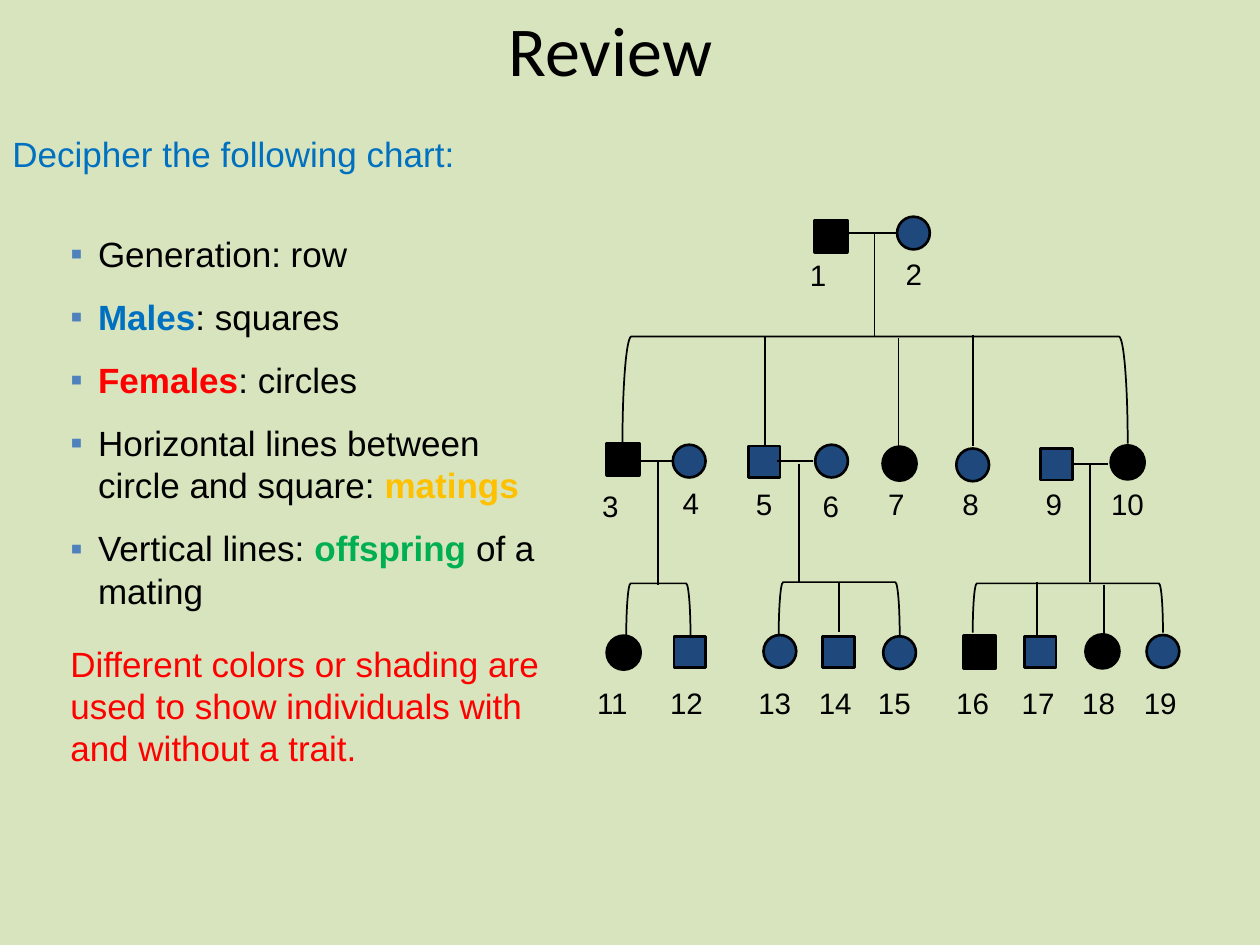
import pptx
import pptx.util
import pptx.dml.color
import pptx.enum.shapes
import pptx.enum.text
import pptx.oxml.ns
import lxml.etree

Inches = pptx.util.Inches
Pt = pptx.util.Pt
RGBColor = pptx.dml.color.RGBColor
SHAPE = pptx.enum.shapes.MSO_SHAPE
FIT = pptx.enum.text.MSO_AUTO_SIZE

BLACK = RGBColor(0x00, 0x00, 0x00)
NAVY = RGBColor(0x1F, 0x49, 0x7D)
BLUE = RGBColor(0x00, 0x70, 0xC0)
RED = RGBColor(0xFF, 0x00, 0x00)
GOLD = RGBColor(0xFF, 0xC0, 0x00)
GREEN = RGBColor(0x00, 0xB0, 0x50)
STEEL = RGBColor(0x4F, 0x81, 0xBD)
SAGE = RGBColor(0xD7, 0xE4, 0xBD)

SIDE = 0.25
AFFECTED = {1, 3, 7, 10, 11, 16, 18}
MALES = {1, 3, 5, 9, 12, 14, 16, 17}

# number: symbol left, symbol top, label left, label top
PEOPLE = {
    1: (1.87, 0.05, 1.73, 0.29), 2: (2.52, 0.02, 2.49, 0.28),
    3: (0.22, 1.82, 0.08, 2.12), 4: (0.74, 1.83, 0.72, 2.1),
    5: (1.34, 1.84, 1.3, 2.11), 6: (1.87, 1.83, 1.83, 2.12),
    7: (2.41, 1.85, 2.35, 2.11), 8: (2.99, 1.86, 2.94, 2.11),
    9: (3.66, 1.86, 3.6, 2.11), 10: (4.22, 1.84, 4.12, 2.11),
    11: (0.22, 3.35, 0.04, 3.69), 12: (0.75, 3.35, 0.62, 3.69),
    13: (1.46, 3.34, 1.32, 3.69), 14: (1.93, 3.35, 1.8, 3.69),
    15: (2.41, 3.35, 2.27, 3.69), 16: (3.05, 3.35, 2.89, 3.69),
    17: (3.53, 3.35, 3.41, 3.69), 18: (4.02, 3.34, 3.89, 3.69),
    19: (4.5, 3.34, 4.38, 3.69),
}
MATINGS = [(2.14, 0.15, 2.52), (0.46, 1.96, 0.74),
           (1.57, 1.96, 1.85), (3.91, 1.98, 4.19)]
DROPS = [(2.34, 0.15, 0.97), (0.62, 1.96, 2.94), (1.74, 1.98, 2.92),
         (4.05, 1.99, 2.92), (1.47, 0.97, 1.85), (2.53, 0.98, 1.86),
         (3.12, 0.96, 1.84), (2.06, 2.93, 3.32), (3.63, 2.92, 3.34),
         (4.16, 2.94, 3.37)]
BROODS = [(0.34, 0.97, 4.01, 0.85), (0.37, 2.93, 0.51, 0.42),
          (1.58, 2.92, 0.96, 0.42), (3.12, 2.93, 1.51, 0.39)]

POINTS = [
    ("Generation: row", "", BLACK, ""),
    ("", "Males", BLUE, ": squares"),
    ("", "Females", RED, ": circles"),
    ("Horizontal lines between circle and square: ", "matings", GOLD, ""),
    ("Vertical lines: ", "offspring", GREEN, " of a mating"),
]


def set_font(part, size, color=None, name="Arial"):
    part.font.size = Pt(size)
    part.font.name = name
    if color is not None:
        part.font.color.rgb = color


def add_text(slide, box, wrap=True):
    frame = slide.shapes.add_textbox(*map(Inches, box)).text_frame
    frame.word_wrap = wrap
    frame.auto_size = FIT.SHAPE_TO_FIT_TEXT
    return frame


def add_bullet(para):
    props = para._p.get_or_add_pPr()
    props.set("marL", str(Inches(0.22)))
    props.set("indent", str(-Inches(0.22)))
    tag = pptx.oxml.ns.qn
    color = lxml.etree.SubElement(props, tag("a:buClr"))
    lxml.etree.SubElement(color, tag("a:srgbClr"), val=str(STEEL))
    lxml.etree.SubElement(props, tag("a:buFont"), typeface="Arial")
    lxml.etree.SubElement(props, tag("a:buChar"), char="▪")


def add_title(slide, box):
    title = slide.shapes.title
    title.left, title.top, title.width, title.height = map(Inches, box)
    title.text_frame.text = "Review"
    para = title.text_frame.paragraphs[0]
    para.alignment = pptx.enum.text.PP_ALIGN.CENTER
    set_font(para, 40, BLACK, "Calibri")


def add_lead(slide, box):
    para = add_text(slide, box).paragraphs[0]
    para.text = "Decipher the following chart:"
    para.space_before = Pt(10)
    set_font(para, 20, BLUE)


def add_points(slide, box):
    frame = add_text(slide, box)
    para = frame.paragraphs[0]
    for start, key, color, end in POINTS:
        add_bullet(para)
        para.space_before = Pt(12)
        set_font(para, 20)
        for text, shade in ((start, BLACK), (key, color), (end, BLACK)):
            if text:
                run = para.add_run()
                run.text = text
                run.font.bold = text == key
                run.font.color.rgb = shade
        para = frame.add_paragraph()
    frame.paragraphs[0].line_spacing = 1.03
    para.text = ("Different colors or shading are used to show "
                 "individuals with and without a trait.")
    para.space_before = Pt(18)
    set_font(para, 20, RED)


def add_line(slide, *ends):
    kind = pptx.enum.shapes.MSO_CONNECTOR.STRAIGHT
    line = slide.shapes.add_connector(kind, *map(Inches, ends))
    line.line.color.rgb = BLACK
    line.line.width = Pt(1)
    props = line._element.spPr
    lxml.etree.SubElement(props, pptx.oxml.ns.qn("a:effectLst"))


def add_shape(slide, kind, box, weight):
    shape = slide.shapes.add_shape(kind, *map(Inches, box))
    shape.shadow.inherit = False
    shape.line.color.rgb = BLACK
    shape.line.width = Pt(weight)
    return shape


def add_brood(slide, left, top, width, height):
    shift = (width - height) / 2
    box = (left + shift, top - shift, height, width)
    shape = add_shape(slide, SHAPE.LEFT_BRACKET, box, 1)
    shape.rotation = 90
    shape.adjustments[0] = 0.083
    shape.fill.background()


def add_person(slide, num, left, top):
    male = num in MALES
    kind, side = (SHAPE.RECTANGLE, SIDE) if male else (SHAPE.OVAL, SIDE + 0.01)
    dark = num in AFFECTED
    shape = add_shape(slide, kind, (left, top, side, side), 2.25 if dark else 1.5)
    shape.fill.solid()
    shape.fill.fore_color.rgb = BLACK if dark else NAVY


def add_label(slide, num, left, top):
    width = 0.33 if num < 10 else 0.46
    para = add_text(slide, (left, top, width, 0.39), False).paragraphs[0]
    para.text = str(num)
    set_font(para, 16.9, BLACK)


def add_tree(slide, left, top):
    for num, (x, y, _, _) in PEOPLE.items():
        add_person(slide, num, left + x, top + y)
    for x, y, width, height in BROODS:
        add_brood(slide, left + x, top + y, width, height)
    for start, y, end in MATINGS:
        add_line(slide, left + start, top + y, left + end, top + y)
    for x, start, end in DROPS:
        add_line(slide, left + x, top + start, left + x, top + end)
    for num, (_, _, x, y) in PEOPLE.items():
        add_label(slide, num, left + x, top + y)


def main():
    deck = pptx.Presentation()
    deck.slide_width, deck.slide_height = Inches(10), Inches(7.5)
    slide = deck.slides.add_slide(deck.slide_layouts[5])
    slide.background.fill.solid()
    slide.background.fill.fore_color.rgb = SAGE
    add_title(slide, (1.13, 0, 7.43, 0.77))
    add_lead(slide, (0, 1, 9.91, 0.44))
    add_tree(slide, 4.6, 1.7)
    add_points(slide, (0.46, 1.79, 3.93, 4.4))
    deck.save("out.pptx")


if __name__ == "__main__":
    main()
